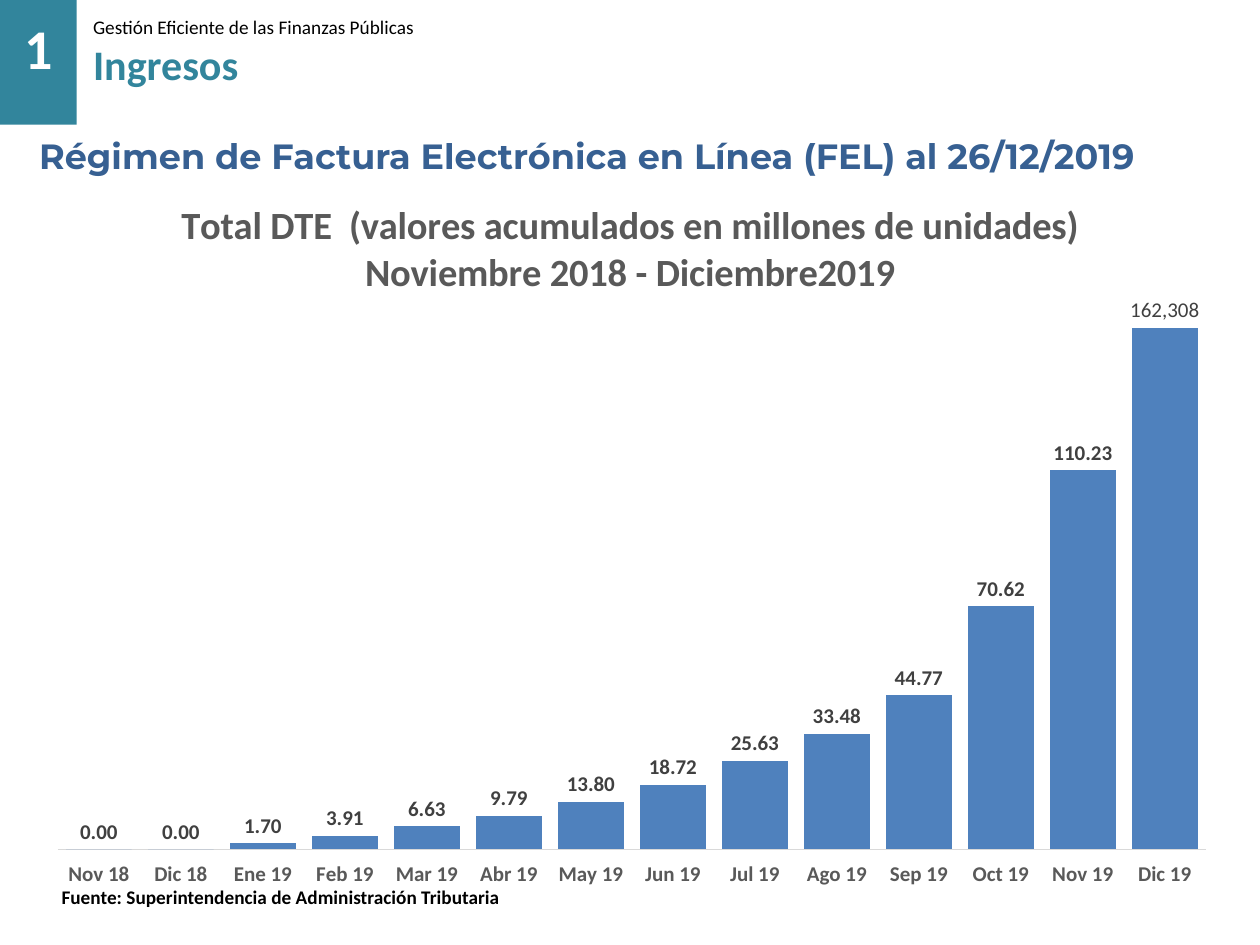
"""Build the slide on cumulative electronic invoices (FEL)."""
from dataclasses import dataclass

from lxml import etree
from pptx import Presentation
from pptx.chart.data import CategoryChartData
from pptx.dml.color import RGBColor
from pptx.enum.chart import XL_CHART_TYPE, XL_LABEL_POSITION, XL_TICK_LABEL_POSITION, XL_TICK_MARK
from pptx.enum.shapes import MSO_SHAPE
from pptx.enum.text import MSO_ANCHOR, MSO_AUTO_SIZE, PP_ALIGN
from pptx.oxml.ns import qn
from pptx.util import Inches, Pt

COLUMN = XL_CHART_TYPE.COLUMN_CLUSTERED
OUTSIDE_END = XL_LABEL_POSITION.OUTSIDE_END
LABELS_LOW = XL_TICK_LABEL_POSITION.LOW
NO_TICK = XL_TICK_MARK.NONE
RECTANGLE = MSO_SHAPE.RECTANGLE
MIDDLE = MSO_ANCHOR.MIDDLE
NO_FIT = MSO_AUTO_SIZE.NONE
LEFT = PP_ALIGN.LEFT

WIDTH, HEIGHT = Inches(10), Inches(7.5)
TEAL = RGBColor(0x32, 0x85, 0x9C)
NAVY = RGBColor(0x37, 0x60, 0x92)
BLUE = RGBColor(0x4F, 0x81, 0xBD)
BLACK = RGBColor(0, 0, 0)
WHITE = RGBColor(0xFF, 0xFF, 0xFF)
DARK_GRAY = RGBColor(0x40, 0x40, 0x40)
GRAY = RGBColor(0x59, 0x59, 0x59)
LIGHT_GRAY = RGBColor(0xD9, 0xD9, 0xD9)

MONTHS = ["Nov 18", "Dic 18"] + [
    f"{month} 19" for month in "Ene Feb Mar Abr May Jun Jul Ago Sep Oct Nov Dic".split()
]
TOTALS = [0, 0, 1.7, 3.91, 6.63, 9.79, 13.8, 18.72, 25.63, 33.48, 44.77, 70.62, 110.23, 151.66]


@dataclass(frozen=True)
class Box:
    """A frame in percent of the slide's width and height."""
    x: float
    y: float
    w: float
    h: float

    def frame(self) -> tuple[int, int, int, int]:
        """Return left, top, width and height as lengths."""
        return (int(WIDTH * self.x / 100), int(HEIGHT * self.y / 100),
                int(WIDTH * self.w / 100), int(HEIGHT * self.h / 100))


@dataclass(frozen=True)
class Line:
    """A paragraph with its formatting."""
    text: str
    size: float
    color: RGBColor
    bold: bool = True
    name: str = "Calibri"


@dataclass(frozen=True)
class Label:
    """A text box holding one or more lines."""
    box: Box
    lines: tuple[Line, ...]


LABELS = (
    Label(Box(3.9, 93.07, 46.6, 3.87),
          (Line("Fuente: Superintendencia de Administración Tributaria", 11, BLACK),)),
    Label(Box(6.4, 0.93, 86.2, 9.2),
          (Line("Gestión Eficiente de las Finanzas Públicas", 11, BLACK, False),
           Line("Ingresos", 24, TEAL))),
    Label(Box(1, 0.8, 5.6, 8.53), (Line("1", 32, WHITE),)),
)
HEADING = Line("Régimen de Factura Electrónica en Línea (FEL) al 26/12/2019",
               20, NAVY, name="Montserrat")
CHART_TITLE = (
    Line("Total DTE  (valores acumulados en millones de unidades)", 22, GRAY),
    Line("Noviembre 2018 - Diciembre2019", 22, GRAY),
)


def style_font(font, size: float, color: RGBColor, bold: bool, name: str = "Calibri") -> None:
    """Set size, colour, weight and typeface of a font."""
    font.size, font.bold, font.name = Pt(size), bold, name
    font.color.rgb = color


def write_lines(tf, lines: tuple[Line, ...]) -> None:
    """Write formatted lines into a text frame."""
    tf.text = "\n".join(line.text for line in lines)
    for p, line in zip(tf.paragraphs, lines):
        for r in p.runs:
            style_font(r.font, line.size, line.color, line.bold, line.name)


def place_part(part, index: int, **shares: float) -> None:
    """Give a chart part a manual layout in shares of the chart."""
    for old in part.findall(qn("c:layout")):
        part.remove(old)
    layout = etree.Element(qn("c:layout"))
    manual = etree.SubElement(layout, qn("c:manualLayout"))
    if "w" in shares:
        etree.SubElement(manual, qn("c:layoutTarget")).set("val", "inner")
    for mode in ("xMode", "yMode"):
        etree.SubElement(manual, qn(f"c:{mode}")).set("val", "edge")
    for key, share in shares.items():
        etree.SubElement(manual, qn(f"c:{key}")).set("val", str(share))
    part.insert(index, layout)


def add_heading(s) -> None:
    """Format the title placeholder as the heading."""
    title = s.shapes.title
    title.left, title.top, title.width, title.height = Box(2.4, 13.73, 96.7, 7.47).frame()
    tf = title.text_frame
    write_lines(tf, (HEADING,))
    tf.auto_size, tf.vertical_anchor, tf.word_wrap = NO_FIT, MIDDLE, True
    tf.margin_left = tf.margin_right = Inches(0.07)
    tf.margin_top = tf.margin_bottom = Inches(0.04)
    p = tf.paragraphs[0]
    p.alignment, p.line_spacing = LEFT, Pt(13.3)


def add_totals_chart(s) -> None:
    """Add the column chart of monthly totals."""
    data = CategoryChartData(number_format="0.00")
    data.categories = MONTHS
    data.add_series("Series 1", TOTALS)
    chart = s.shapes.add_chart(COLUMN, *Box(2.7, 16.93, 94.9, 77.6).frame(), data).chart
    style_font(chart.font, 10, BLACK, False)
    chart.has_legend = False
    chart.has_title = True
    write_lines(chart.chart_title.text_frame, CHART_TITLE)
    chart.chart_title.include_in_layout = False

    months = chart.category_axis
    months.major_tick_mark = months.minor_tick_mark = NO_TICK
    months.tick_label_position = LABELS_LOW
    months.format.line.color.rgb = LIGHT_GRAY
    months.format.line.width = Pt(0.75)
    style_font(months.tick_labels.font, 12, GRAY, True)
    totals = chart.value_axis
    totals.visible = totals.has_major_gridlines = False
    totals.minimum_scale, totals.maximum_scale = 0, 160

    plot = chart.plots[0]
    plot.gap_width, plot.vary_by_categories = 25, False
    series = plot.series[0]
    series.format.fill.solid()
    series.format.fill.fore_color.rgb = BLUE
    labels = series.data_labels
    labels.show_value, labels.position = True, OUTSIDE_END
    labels.number_format, labels.number_format_is_linked = "0.00", False
    style_font(labels.font, 12, DARK_GRAY, True)
    last = series.points[len(TOTALS) - 1].data_label
    write_lines(last.text_frame, (Line("162,308", 12, DARK_GRAY, False),))
    last.position = OUTSIDE_END

    place_part(chart.chart_title._element, 1, x=0.12, y=0.05)
    place_part(chart._chartSpace.chart.plotArea, 0, x=0.02, y=0.19, w=0.96, h=0.75)


def add_number_block(s) -> None:
    """Add the coloured block behind the section number."""
    block = s.shapes.add_shape(RECTANGLE, *Box(-0.2, -0.4, 6.3, 13.6).frame())
    block.shadow.inherit = False
    block.fill.solid()
    block.fill.fore_color.rgb = TEAL
    block.line.fill.background()


def add_label(s, label: Label) -> None:
    """Add a wrapped text box."""
    tf = s.shapes.add_textbox(*label.box.frame()).text_frame
    tf.word_wrap = True
    write_lines(tf, label.lines)


def main() -> None:
    """Build and save the presentation."""
    prs = Presentation()
    prs.slide_width, prs.slide_height = WIDTH, HEIGHT
    s = prs.slides.add_slide(prs.slide_layouts[5])
    add_heading(s)
    add_totals_chart(s)
    add_number_block(s)
    for label in LABELS:
        add_label(s, label)
    prs.save("out.pptx")


if __name__ == "__main__":
    main()
